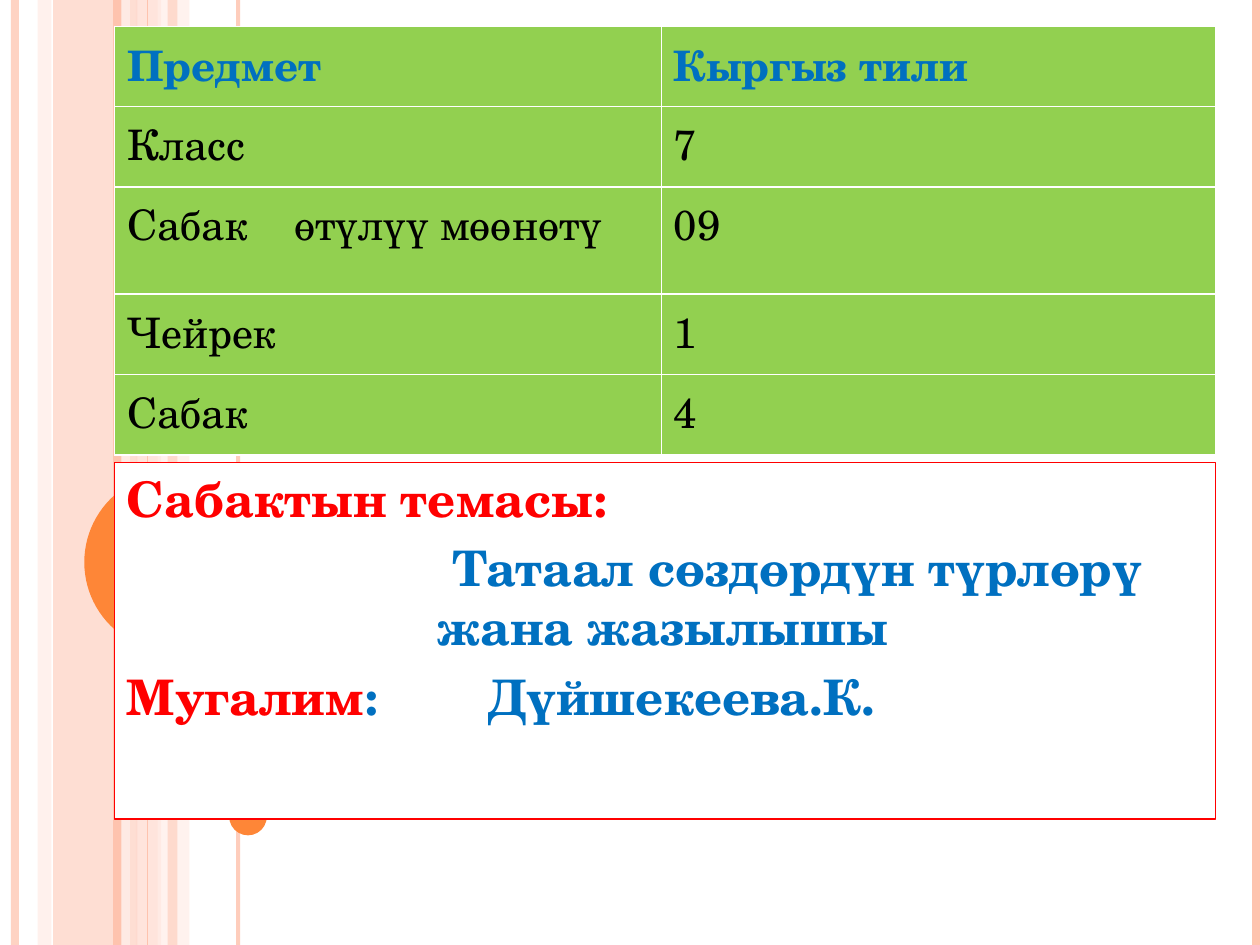
from lxml.etree import SubElement
from pptx import Presentation
from pptx.dml.color import RGBColor
from pptx.enum.shapes import MSO_CONNECTOR, MSO_SHAPE
from pptx.enum.text import MSO_ANCHOR, PP_ALIGN
from pptx.oxml.ns import qn
from pptx.util import Cm, Pt

FONT = "TeX Gyre Schola"
WIDTH, HEIGHT = 25.4, 19.05
LEFT = 2.31
PEACH = RGBColor(0xFE, 0xC3, 0xAE)
PINK = RGBColor(0xFF, 0xD9, 0xCE)
PALE = RGBColor(0xFF, 0xED, 0xE8)
ORANGE = RGBColor(0xFE, 0x86, 0x37)
GREEN = RGBColor(0x92, 0xD0, 0x50)
BLUE = RGBColor(0x00, 0x70, 0xC0)
RED = RGBColor(0xFF, 0x00, 0x00)
BLACK = RGBColor(0x00, 0x00, 0x00)
WHITE = RGBColor(0xFF, 0xFF, 0xFF)

BANDS = [
    (1.07, 1.7, PEACH, 54),
    (0.76, 0.28, PINK, 36),
    (2.74, 0.51, PINK, 70),
    (3.18, 0.64, PALE, 71),
]
STRIPES = [
    (0.3, PEACH, 4.5, 73),
    (2.54, PALE, 4.5, 83),
    (2.36, PEACH, 4.5, 100),
    (4.8, PEACH, 2.25, 82),
    (2.97, PEACH, 0.75, 100),
    (25.32, PEACH, 4.5, 100),
]
NARROW_BAND = (3.38, 0.2, PEACH, 51)
CIRCLES = [(1.7, 9.53, 3.61), (4.62, 16.08, 0.76)]
ROWS = [
    ("Предмет", "Кыргыз тили"),
    ("Класс", "7"),
    ("Сабак\tөтүлүү мөөнөтү", "09"),
    ("Чейрек", "1"),
    ("Сабак", "4"),
]
COLUMN_WIDTHS = [11.02, 11.18]
ROW_HEIGHTS = [1.62, 1.62, 2.16, 1.62, 1.62]
TOPIC = [
    ([("Сабактын темасы:", RED)], {}),
    ([("Татаал сөздөрдүн түрлөрү жана жазылышы", BLUE)],
     {"marL": Cm(6.27), "indent": Cm(0.3)}),
    ([("Мугалим", RED), (":\tДүйшекеева.К.", BLUE)], {}),
]


def set_alpha(element, percent):
    """Make the solid colour inside an element partly transparent."""
    if percent < 100:
        color = next(element.iter(qn("a:srgbClr")))
        SubElement(color, qn("a:alpha"), val=str(percent * 1000))


def add_tab(paragraph, position):
    """Add one left tab stop to a paragraph."""
    tabs = SubElement(paragraph._p.get_or_add_pPr(), qn("a:tabLst"))
    SubElement(tabs, qn("a:tab"), pos=str(Cm(position)), algn="l")


def add_run(paragraph, text, color, size, bold):
    """Add a formatted run to a paragraph."""
    run = paragraph.add_run()
    run.text = text
    for name, value in {"name": FONT, "size": Pt(size), "bold": bold}.items():
        setattr(run.font, name, value)
    run.font.color.rgb = color


def add_filled(slide, kind, box, color, alpha=100):
    """Add a preset shape with a plain fill and no outline."""
    shape = slide.shapes.add_shape(kind, *map(Cm, box))
    shape.shadow.inherit = False
    shape.fill.solid()
    shape.fill.fore_color.rgb = color
    shape.line.fill.background()
    set_alpha(shape._element.spPr, alpha)
    return shape


def add_band(slide, left, width, color, alpha):
    """Add a vertical band of full slide height."""
    add_filled(slide, MSO_SHAPE.RECTANGLE, (left, 0, width, HEIGHT), color, alpha)


def add_stripe(slide, position, color, width, alpha):
    """Add a vertical line of full slide height."""
    ends = map(Cm, (position, 0, position, HEIGHT))
    line = slide.shapes.add_connector(MSO_CONNECTOR.STRAIGHT, *ends)
    line.line.color.rgb = color
    line.line.width = Pt(width)
    properties = line._element.spPr
    set_alpha(properties, alpha)
    SubElement(properties, qn("a:effectLst"))


def add_topic_box(slide):
    """Add the outlined box with the lesson topic and the teacher."""
    box = (LEFT, 9.32, sum(COLUMN_WIDTHS), 7.19)
    shape = add_filled(slide, MSO_SHAPE.RECTANGLE, box, WHITE)
    shape.line.color.rgb = RED
    shape.line.width = Pt(0.75)
    frame = shape.text_frame
    for name, value in {"word_wrap": True, "vertical_anchor": MSO_ANCHOR.TOP}.items():
        setattr(frame, name, value)
    for index, (runs, indents) in enumerate(TOPIC):
        paragraph = frame.add_paragraph() if index else frame.paragraphs[0]
        paragraph.alignment = PP_ALIGN.LEFT
        paragraph.space_before = Pt(6)
        for name, value in indents.items():
            paragraph._p.get_or_add_pPr().set(name, str(value))
        for text, color in runs:
            add_run(paragraph, text, color, 28, True)
            if "\t" in text:
                add_tab(paragraph, 7.28)


def add_lesson_table(slide):
    """Add the green table of lesson details."""
    box = (LEFT, 0.53, sum(COLUMN_WIDTHS), sum(ROW_HEIGHTS))
    table = slide.shapes.add_table(
        len(ROWS), len(COLUMN_WIDTHS), *map(Cm, box)).table
    for column, width in zip(table.columns, COLUMN_WIDTHS):
        column.width = Cm(width)
    for row_index, (texts, height) in enumerate(zip(ROWS, ROW_HEIGHTS)):
        table.rows[row_index].height = Cm(height)
        header = row_index == 0
        for column_index, text in enumerate(texts):
            cell = table.cell(row_index, column_index)
            cell.fill.solid()
            cell.fill.fore_color.rgb = GREEN
            paragraph = cell.text_frame.paragraphs[0]
            add_run(paragraph, text, BLUE if header else BLACK, 24, header)
            if "\t" in text:
                add_tab(paragraph, 3.37)


def main():
    """Build the lesson slide and save it."""
    presentation = Presentation()
    presentation.slide_width = Cm(WIDTH)
    presentation.slide_height = Cm(HEIGHT)
    slide = presentation.slides.add_slide(presentation.slide_layouts[6])
    for band in BANDS:
        add_band(slide, *band)
    for stripe in STRIPES:
        add_stripe(slide, *stripe)
    add_band(slide, *NARROW_BAND)
    for left, top, size in CIRCLES:
        add_filled(slide, MSO_SHAPE.OVAL, (left, top, size, size), ORANGE)
    add_topic_box(slide)
    add_lesson_table(slide)
    presentation.save("out.pptx")


if __name__ == "__main__":
    main()
